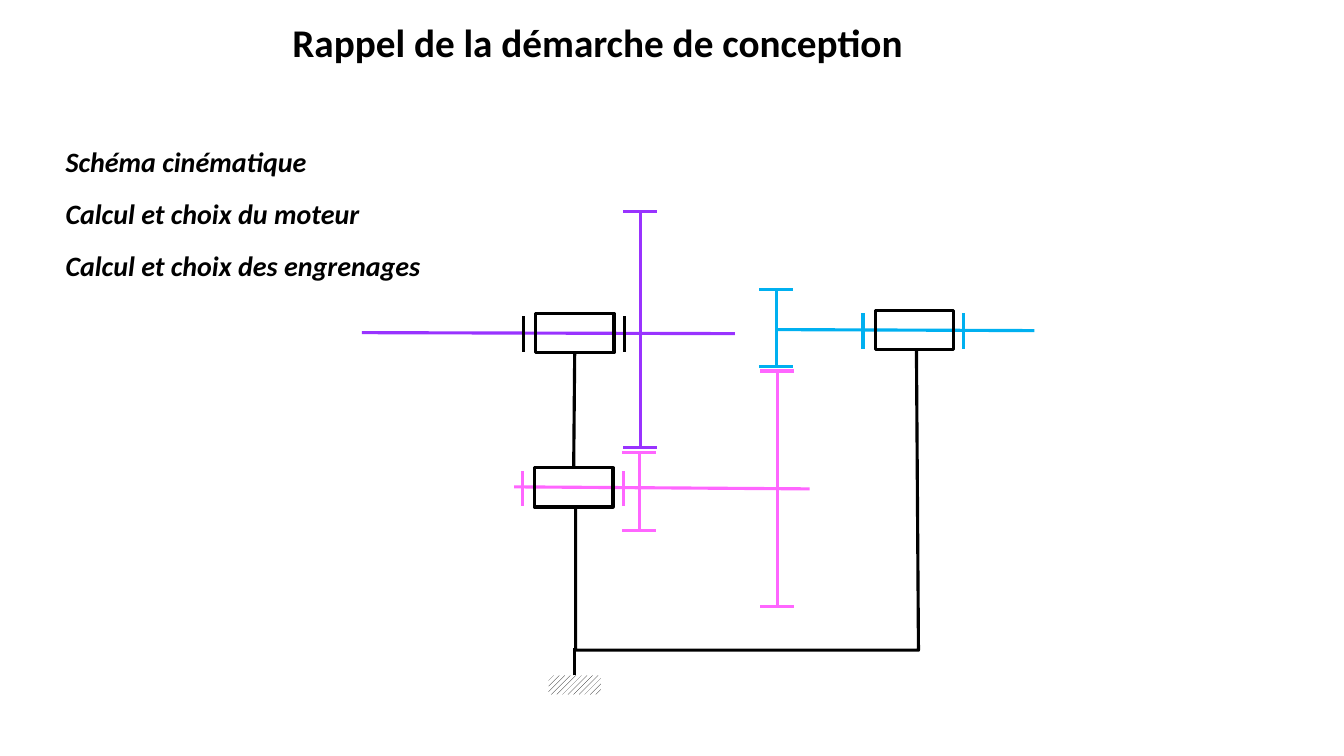
from dataclasses import dataclass

from lxml import etree
from pptx import Presentation
from pptx.dml.color import RGBColor
from pptx.enum.dml import MSO_PATTERN
from pptx.enum.shapes import MSO_CONNECTOR, MSO_SHAPE
from pptx.enum.text import MSO_ANCHOR, PP_ALIGN
from pptx.oxml.ns import qn
from pptx.util import Inches, Pt

BLACK, WHITE = "000000", "FFFFFF"
BLUE, PINK, PURPLE = "00B0F0", "FF66FF", "9933FF"
LINE_WIDTH = Pt(2.25)
HOUSING_W, HOUSING_H = 0.78, 0.39


@dataclass(frozen=True)
class Gear:
    x: float
    top: float
    bottom: float
    color: str


@dataclass(frozen=True)
class Shaft:
    x1: float
    y1: float
    x2: float
    y2: float
    color: str


@dataclass(frozen=True)
class Bearing:
    left: float
    top: float
    stop_color: str


GEARS = [
    Gear(7.7, 2.87, 3.64, BLUE),
    Gear(6.34, 4.49, 5.26, PINK),
    Gear(7.71, 3.68, 6.02, PINK),
    Gear(6.35, 2.1, 4.44, PURPLE),
]
SHAFTS = [
    Shaft(7.7, 3.27, 10.26, 3.28, BLUE),
    Shaft(5.1, 4.83, 8.03, 4.85, PINK),
    Shaft(3.59, 3.3, 7.29, 3.31, PURPLE),
]
OUTPUT_BEARING = Bearing(8.68, 3.08, BLUE)
MIDDLE_BEARING = Bearing(5.3, 4.64, PINK)
INPUT_BEARING = Bearing(5.31, 3.11, BLACK)
FRAME = [(5.71, 5.04), (5.71, 6.45), (9.11, 6.45), (9.09, 3.47)]
STEPS = [
    "Schéma cinématique",
    "Calcul et choix du moteur",
    "Calcul et choix des engrenages",
]


def rgb(color: str) -> RGBColor:
    return RGBColor.from_string(color)


def add_line(s, x1: float, y1: float, x2: float, y2: float, color: str):
    line = s.shapes.add_connector(
        MSO_CONNECTOR.STRAIGHT, Inches(x1), Inches(y1), Inches(x2), Inches(y2))
    line.line.color.rgb = rgb(color)
    line.line.width = LINE_WIDTH
    etree.SubElement(line._element.spPr, qn("a:effectLst"))
    return line


def outline(sp) -> None:
    """Leave only a black contour on the shape."""
    sp.shadow.inherit = False
    sp.fill.background()
    sp.line.color.rgb = rgb(BLACK)
    sp.line.width = LINE_WIDTH


def add_gear(s, gear: Gear) -> None:
    """Draw a gear as a web with a short rim at each end."""
    add_line(s, gear.x, gear.top, gear.x, gear.bottom, gear.color)
    for y in (gear.top, gear.bottom):
        add_line(s, gear.x - 0.17, y, gear.x + 0.17, y, gear.color)


def add_bearing(s, bearing: Bearing):
    """Draw a housing between two axial stops and return the housing."""
    housing = s.shapes.add_shape(
        MSO_SHAPE.RECTANGLE, Inches(bearing.left), Inches(bearing.top),
        Inches(HOUSING_W), Inches(HOUSING_H))
    outline(housing)
    for x in (bearing.left - 0.12, bearing.left + HOUSING_W + 0.1):
        add_line(s, x, bearing.top + 0.38, x, bearing.top + 0.03, bearing.stop_color)
    return housing


def add_frame(s) -> None:
    points = [(Inches(x), Inches(y)) for x, y in FRAME]
    builder = s.shapes.build_freeform(*points[0])
    builder.add_line_segments(points[1:], close=False)
    outline(builder.convert_to_shape())


def add_ground(s) -> None:
    ground = s.shapes.add_shape(
        MSO_SHAPE.RECTANGLE, Inches(5.44), Inches(6.7), Inches(0.52), Inches(0.19))
    ground.shadow.inherit = False
    ground.fill.patterned()
    ground.fill.pattern = MSO_PATTERN.WIDE_UPWARD_DIAGONAL
    ground.fill.fore_color.rgb = rgb(BLACK)
    ground.fill.back_color.rgb = rgb(WHITE)
    ground.line.fill.background()
    post = add_line(s, 5.7, 6.7, 5.7, 6.43, BLACK)
    post.begin_connect(ground, 0)


def place(sp, left: float, top: float, width: float, height: float) -> None:
    sp.left, sp.top = Inches(left), Inches(top)
    sp.width, sp.height = Inches(width), Inches(height)


def add_run(p, text: str, size: int, italic: bool = False) -> None:
    r = p.add_run()
    r.text = text
    r.font.name = "Calibri"
    r.font.size = Pt(size)
    r.font.bold = True
    r.font.italic = italic
    r.font.color.rgb = rgb(BLACK)


def fill_title(s) -> None:
    title = s.shapes.title
    place(title, 2.76, 0.13, 6.33, 0.57)
    tf = title.text_frame
    tf.word_wrap = False
    tf.vertical_anchor = MSO_ANCHOR.MIDDLE
    p = tf.paragraphs[0]
    p.alignment = PP_ALIGN.CENTER
    add_run(p, "Rappel de la démarche de conception", 28)


def fill_steps(s) -> None:
    body = s.placeholders[1]
    place(body, 0.55, 1.38, 3.74, 1.49)
    tf = body.text_frame
    tf.word_wrap = False
    tf.vertical_anchor = MSO_ANCHOR.TOP
    for i, step in enumerate(STEPS):
        p = tf.add_paragraph() if i else tf.paragraphs[0]
        p.alignment = PP_ALIGN.LEFT
        p.space_before = Pt(13.4 if i else 0)
        p.space_after = Pt(0)
        pPr = p._p.get_or_add_pPr()
        pPr.set("marL", "0")
        pPr.set("indent", "0")
        etree.SubElement(pPr, qn("a:buNone"))
        add_run(p, step, 20, italic=True)


def main() -> None:
    prs = Presentation()
    prs.slide_width, prs.slide_height = Inches(13.33), Inches(7.5)
    s = prs.slides.add_slide(prs.slide_layouts[1])
    fill_title(s)
    fill_steps(s)
    for gear in GEARS:
        add_gear(s, gear)
    for shaft in SHAFTS:
        add_line(s, shaft.x1, shaft.y1, shaft.x2, shaft.y2, shaft.color)
    add_bearing(s, OUTPUT_BEARING)
    middle = add_bearing(s, MIDDLE_BEARING)
    upper = add_bearing(s, INPUT_BEARING)
    add_frame(s)
    link = add_line(s, 5.69, 4.64, 5.69, 3.5, BLACK)
    link.begin_connect(middle, 0)
    link.end_connect(upper, 2)
    add_ground(s)
    prs.save("out.pptx")


if __name__ == "__main__":
    main()
